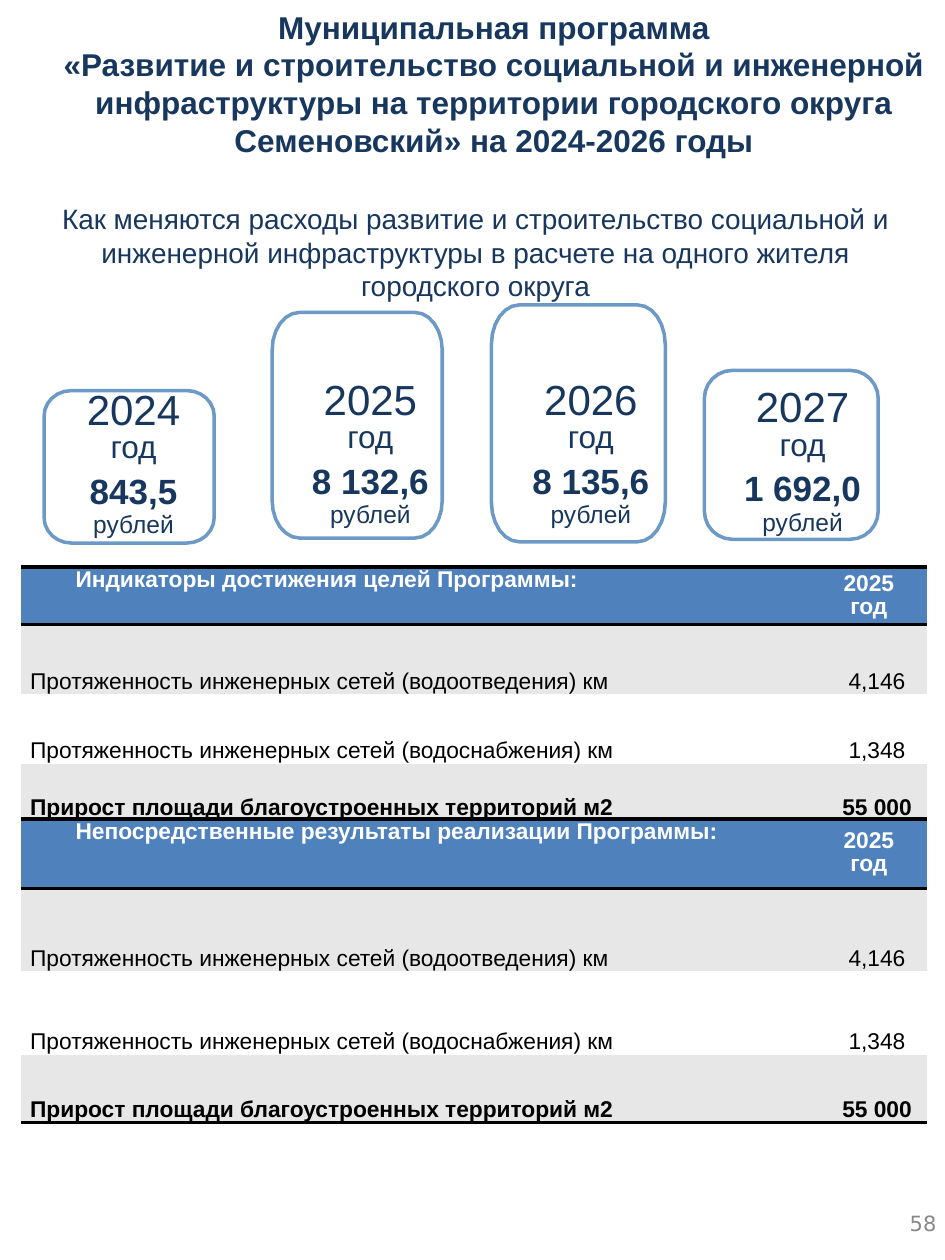
from math import cos, radians, sin

from lxml.etree import SubElement
from pptx import Presentation
from pptx.dml.color import RGBColor
from pptx.enum.text import MSO_ANCHOR as Anchor, MSO_AUTO_SIZE as AutoSize, PP_ALIGN as Align
from pptx.oxml.ns import qn
from pptx.util import Inches, Pt

NAVY = RGBColor(0x17, 0x37, 0x5E)
OUTLINE = RGBColor(0x6C, 0x99, 0xC5)
HEADER = RGBColor(0x4F, 0x81, 0xBD)
BAND = RGBColor(0xE7, 0xE7, 0xE7)
WHITE = RGBColor(0xFF, 0xFF, 0xFF)
BLACK = RGBColor(0, 0, 0)
GRAY = RGBColor(0x88, 0x88, 0x88)
PLAIN_TABLE_STYLE = "{2D5ABB26-0587-4C30-8999-92F81FD0307C}"

TITLE = ("Муниципальная программа\v«Развитие и строительство социальной и инженерной "
         "инфраструктуры на территории городского округа Семеновский» на 2024-2026 годы")
QUESTION = ("Как меняются расходы развитие и строительство социальной и инженерной "
            "инфраструктуры в расчете на одного жителя городского округа")
PAGE_NUMBER = "58"

# year, roubles, frame (left, top, width, height), text box (left, top)
YEARS = [
    ("2024", "843,5", (0.35, 3.1, 1.35, 1.21), (0.04, 2.83)),
    ("2025", "8 132,6", (2.16, 2.48, 1.35, 1.79), (1.92, 2.75)),
    ("2026", "8 135,6", (3.9, 2.42, 1.38, 1.88), (3.67, 2.75)),
    ("2027", "1 692,0", (5.59, 2.94, 1.38, 1.34), (5.35, 2.81)),
]
YEAR_BOX_SIZE = (1.86, 1.02)
# size, bold, line spacing in points for each line of a year box
YEAR_LINES = [(24, False, 18.1), (18, False, 17.9), (20, True, 26.4), (14, False, 15.7)]

INDICATORS = [
    ("Протяженность инженерных сетей (водоотведения) км", "4,146"),
    ("Протяженность инженерных сетей (водоснабжения) км", "1,348"),
    ("Прирост площади благоустроенных территорий м2", "55 000"),
]
# heading, top, row heights
TABLES = [
    ("Индикаторы достижения целей Программы:", 4.5, (0.46, 0.55, 0.55, 0.45)),
    ("Непосредственные результаты реализации Программы:", 6.5, (0.55, 0.66, 0.66, 0.54)),
]
TABLE_LEFT = 0.17
TABLE_COLUMNS = (6.33, 0.86)


def format_paragraph(paragraph, size, color, bold=False, align=None, name="Arial", spacing=None):
    paragraph.alignment = align
    paragraph.line_spacing = spacing
    for run in paragraph.runs:
        font = run.font
        font.size, font.bold, font.name = Pt(size), bold, name
        font.color.rgb = color


def set_margins(target, left=0, top=0, right=0, bottom=0):
    target.margin_left, target.margin_top = Inches(left), Inches(top)
    target.margin_right, target.margin_bottom = Inches(right), Inches(bottom)


def add_text_box(slide, left, top, width, height, text):
    frame = slide.shapes.add_textbox(*map(Inches, (left, top, width, height))).text_frame
    frame.word_wrap = True
    frame.text = text
    return frame


def add_title(slide):
    title = slide.shapes.title
    title.left, title.top, title.width, title.height = map(Inches, (0.17, 0.01, 7.5, 1.31))
    frame = title.text_frame
    frame.text = TITLE
    frame.vertical_anchor = Anchor.TOP
    frame.auto_size = AutoSize.SHAPE_TO_FIT_TEXT
    format_paragraph(frame.paragraphs[0], 18, NAVY, True, Align.CENTER)


def add_year_frame(slide, left, top, width, height):
    """Outline with elliptical corners proportional to its sides."""
    radius_x, radius_y = 0.16 * width, height / 6
    right, bottom = left + width - radius_x, top + height - radius_y
    corners = [(right, bottom, 0), (left + radius_x, bottom, 90),
               (left + radius_x, top + radius_y, 180), (right, top + radius_y, 270)]
    points = [(Inches(x + radius_x * cos(radians(start + step))),
               Inches(y + radius_y * sin(radians(start + step))))
              for x, y, start in corners for step in range(0, 91, 15)]
    builder = slide.shapes.build_freeform(*points[0])
    builder.add_line_segments(points[1:], close=True)
    shape = builder.convert_to_shape()
    shape.shadow.inherit = False
    shape.fill.background()
    shape.line.color.rgb = OUTLINE
    shape.line.width = Pt(2)


def add_year(slide, year, roubles, outline, position):
    add_year_frame(slide, *outline)
    frame = add_text_box(slide, *position, *YEAR_BOX_SIZE, f"{year}\nгод\n{roubles}\nрублей")
    set_margins(frame, left=0.18, top=0.36)
    for paragraph, (size, bold, spacing) in zip(frame.paragraphs, YEAR_LINES):
        format_paragraph(paragraph, size, NAVY, bold, Align.CENTER, spacing=Pt(spacing))


def add_border(cell, side):
    line = SubElement(cell._tc.get_or_add_tcPr(), qn(f"a:{side}"), w=str(Pt(2)))
    fill = SubElement(line, qn("a:solidFill"))
    SubElement(fill, qn("a:srgbClr"), val=str(BLACK))


def add_indicator_table(slide, heading, top, heights):
    content = [(heading, "2025\nгод")] + INDICATORS
    shape = slide.shapes.add_table(len(content), len(TABLE_COLUMNS), Inches(TABLE_LEFT), Inches(top),
                                   Inches(sum(TABLE_COLUMNS)), Inches(sum(heights)))
    table = shape.table
    table.first_row = table.horz_banding = False
    table._tbl.tblPr.find(qn("a:tableStyleId")).text = PLAIN_TABLE_STYLE
    for column, width in zip(table.columns, TABLE_COLUMNS):
        column.width = Inches(width)
    last = len(content) - 1
    for row, (texts, height) in enumerate(zip(content, heights)):
        table.rows[row].height = Inches(height)
        is_header = row == 0
        for column, text in enumerate(texts):
            cell = table.cell(row, column)
            cell.text = text
            if is_header:
                add_border(cell, "lnT")
            if row in (0, last):
                add_border(cell, "lnB")
            cell.fill.solid()
            cell.fill.fore_color.rgb = HEADER if is_header else BAND if row % 2 else WHITE
            if is_header:
                cell.vertical_anchor = Anchor.MIDDLE if column else Anchor.TOP
                set_margins(cell, left=0 if column else 0.43, right=0.07 if column else 0)
                spacing = Pt(13.2) if column else None
            else:
                cell.vertical_anchor = Anchor.BOTTOM
                set_margins(cell, left=0.06 if column else 0.07, right=0 if column else 0.07)
                spacing = None if column else 1.15
            for paragraph in cell.text_frame.paragraphs:
                format_paragraph(paragraph, 13, WHITE if is_header else BLACK, row in (0, last),
                                 Align.CENTER if column else Align.LEFT, spacing=spacing)


def main():
    presentation = Presentation()
    presentation.slide_width, presentation.slide_height = Inches(7.5), Inches(10)
    slide = presentation.slides.add_slide(presentation.slide_layouts[5])

    add_title(slide)
    question = add_text_box(slide, 0.19, 1.16, 7.17, 1.58, QUESTION)
    question.vertical_anchor = Anchor.MIDDLE
    question.margin_top = Inches(0.15)
    format_paragraph(question.paragraphs[0], 16, NAVY, align=Align.CENTER)

    for year in YEARS:
        add_year(slide, *year)
    for table in TABLES:
        add_indicator_table(slide, *table)

    number = add_text_box(slide, 7.16, 9.61, 0.31, 0.25, PAGE_NUMBER)
    set_margins(number, left=0.06)
    format_paragraph(number.paragraphs[0], 12, GRAY, name="DejaVu Sans")

    presentation.save("out.pptx")


if __name__ == "__main__":
    main()
